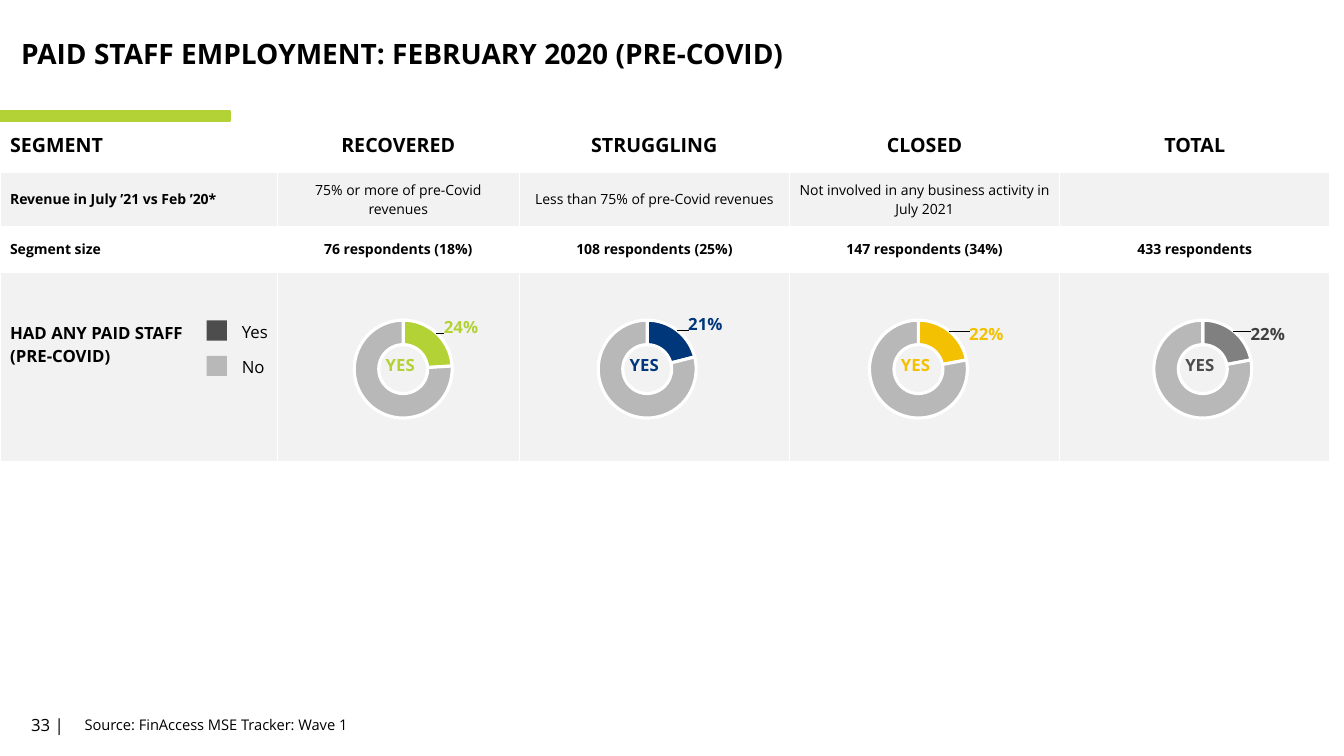
"""Build the paid staff employment slide with a segment table and doughnut charts."""
from dataclasses import dataclass

from lxml import etree
from pptx import Presentation
from pptx.chart.data import CategoryChartData
from pptx.dml.color import RGBColor as Rgb
from pptx.enum.chart import XL_CHART_TYPE as ChartType
from pptx.enum.shapes import MSO_SHAPE as Preset
from pptx.enum.text import MSO_ANCHOR as Anchor, PP_ALIGN as Align
from pptx.oxml import parse_xml
from pptx.oxml.ns import nsdecls, qn
from pptx.util import Inches, Pt


@dataclass(frozen=True)
class Theme:
    font: str = "Open Sans"
    black: str = "000000"
    white: str = "FFFFFF"
    band: str = "F2F2F2"
    lime: str = "B3D235"
    navy: str = "00377B"
    gold: str = "F3C102"
    mid_gray: str = "808080"
    dark_gray: str = "4D4D4D"
    label_gray: str = "404040"
    no_gray: str = "B8B8B8"
    title: float = 20
    heading: float = 14
    body: float = 12
    source: float = 10.5
    small: float = 10


def set_all(target, values):
    for name, value in values.items():
        setattr(target, name, value)


class SlideBuilder:
    def __init__(self, deck, theme):
        self.theme = theme
        self.slide = deck.slides.add_slide(deck.slide_layouts[5])

    def style(self, font, size, color=None, bold=False):
        set_all(font, {"name": self.theme.font, "size": Pt(size), "bold": bold})
        font.color.rgb = Rgb.from_string(color or self.theme.black)

    def paint(self, fill, color):
        fill.solid()
        fill.fore_color.rgb = Rgb.from_string(color)

    def put_text(self, frame, text, size, color=None, bold=False, **paragraph_format):
        for index, line in enumerate(text.split("\n")):
            paragraph = frame.add_paragraph() if index else frame.paragraphs[0]
            set_all(paragraph, paragraph_format)
            run = paragraph.add_run()
            run.text = line
            self.style(run.font, size, color, bold)

    def title(self, text, box):
        heading = self.slide.shapes.title
        set_all(heading, dict(zip(("left", "top", "width", "height"), map(Inches, box))))
        set_all(heading.text_frame, {"vertical_anchor": Anchor.MIDDLE, "word_wrap": True})
        self.put_text(heading.text_frame, text, self.theme.title, bold=True,
                      alignment=Align.LEFT, line_spacing=0.9)

    def text(self, text, box, size, color=None, bold=False, anchor=Anchor.TOP, **paragraph_format):
        frame = self.slide.shapes.add_textbox(*map(Inches, box)).text_frame
        set_all(frame, {"word_wrap": True, "vertical_anchor": anchor})
        self.put_text(frame, text, size, color, bold, **paragraph_format)

    def block(self, box, color, outlined=False):
        shape = self.slide.shapes.add_shape(Preset.RECTANGLE, *map(Inches, box))
        shape.shadow.inherit = False
        self.paint(shape.fill, color)
        if outlined:
            shape.line.color.rgb = Rgb.from_string(color)
            shape.line.width = Pt(1)
        else:
            shape.line.fill.background()

    def border(self, cell, bottom):
        properties = cell._tc.get_or_add_tcPr()
        for index, side in enumerate(("lnL", "lnR", "lnT", "lnB")):
            width = Pt(bottom if side == "lnB" else 1)
            properties.insert(index, parse_xml(
                f'<a:{side} {nsdecls("a")} w="{width}"><a:solidFill>'
                f'<a:srgbClr val="{self.theme.white}"/></a:solidFill></a:{side}>'))

    def table(self, rows, left, top, widths, heights):
        grid = self.slide.shapes.add_table(
            len(heights), len(widths), Inches(left), Inches(top),
            Inches(sum(widths)), Inches(sum(heights))).table
        set_all(grid, {"first_row": False, "horz_banding": False})
        for column, width in zip(grid.columns, widths):
            column.width = Inches(width)
        for r, (row, height) in enumerate(zip(rows, heights)):
            grid.rows[r].height = Inches(height)
            size = (self.theme.heading, self.theme.small, self.theme.small,
                    self.theme.body, self.theme.small)[r]
            for c, text in enumerate(row):
                cell = grid.cell(r, c)
                cell.vertical_anchor = Anchor.MIDDLE if r else Anchor.TOP
                if r % 2:
                    self.paint(cell.fill, self.theme.band)
                else:
                    cell.fill.background()
                self.border(cell, 1 if r else 3)
                if text:
                    self.put_text(cell.text_frame, text, size, bold=c == 0 or r != 1,
                                  alignment=Align.CENTER if c else Align.LEFT)
        return grid

    def doughnut(self, left, share, color, label_color, yes_color, label_shift):
        data = CategoryChartData(number_format="0%")
        data.categories = ["1", "2"]
        data.add_series("Series 1", (share, round(1 - share, 2)))
        chart = self.slide.shapes.add_chart(
            ChartType.DOUGHNUT, *map(Inches, (left, 2.92, 2.95, 1.35)), data).chart
        set_all(chart, {"has_legend": False, "has_title": False})
        self.style(chart.font, self.theme.small)
        plot = chart.plots[0]
        plot.vary_by_categories = False
        ring = plot.series[0]
        for index, fill in enumerate((color, self.theme.no_gray)):
            part = ring.points[index].format
            self.paint(part.fill, fill)
            part.line.color.rgb = Rgb.from_string(self.theme.white)
            part.line.width = Pt(2.25)
        set_all(ring.data_labels, {"show_value": False, "show_percentage": False,
                                   "number_format": "0%", "number_format_is_linked": False})
        self.style(ring.points[0].data_label.font, self.theme.body, label_color, True)
        space = chart._chartSpace
        space.find(".//" + qn("c:holeSize")).set("val", "59")
        label = space.find(".//" + qn("c:dLbl"))
        label.insert(1, self.layout(zip("xy", label_shift)))
        label.insert(2, parse_xml(
            f'<c:numFmt {nsdecls("c")} formatCode="0%" sourceLinked="0"/>'))
        area = space.find(".//" + qn("c:plotArea"))
        for old in area.findall(qn("c:layout")):
            area.remove(old)
        area.insert(0, self.layout((
            ("layoutTarget", "inner"), ("xMode", "edge"), ("yMode", "edge"),
            ("x", 0.34), ("y", 0.19), ("w", 0.33), ("h", 0.72))))
        self.text("YES", (left + 1.17, 3.47, 0.58, 0.3), self.theme.body, yes_color, True,
                  alignment=Align.CENTER, space_after=Pt(6))

    def layout(self, settings):
        layout = parse_xml(f'<c:layout {nsdecls("c")}/>')
        manual = etree.SubElement(layout, qn("c:manualLayout"))
        for name, value in settings:
            etree.SubElement(manual, qn("c:" + name)).set("val", str(value))
        return layout


def main():
    theme = Theme()
    deck = Presentation()
    set_all(deck, {"slide_width": Inches(13.33), "slide_height": Inches(7.5)})
    page = SlideBuilder(deck, theme)
    page.block((0, 1.1, 2.28, 0.1), theme.lime, outlined=True)
    page.title("PAID STAFF EMPLOYMENT: FEBRUARY 2020 (PRE-COVID)", (0.11, 0.04, 11.78, 1.02))
    page.text("33 |", (0.21, 6.99, 0.69, 0.4), theme.body, anchor=Anchor.MIDDLE)
    segments = page.table((
        ("SEGMENT", "RECOVERED", "STRUGGLING", "CLOSED", "TOTAL"),
        ("Revenue in July ’21 vs Feb ’20*", "75% or more of pre-Covid revenues",
         "Less than 75% of pre-Covid revenues",
         "Not involved in any business activity in July 2021", ""),
        ("Segment size", "76 respondents (18%)", "108 respondents (25%)",
         "147 respondents (34%)", "433 respondents"),
        ("HAD ANY PAID STAFF\n(PRE-COVID)", "", "", "", ""),
        ("",) * 5,
    ), 0, 1.25, (2.75, 2.4, 2.68, 2.68, 2.68), (0.45, 0.55, 0.45, 1.88, 2.1))
    segments.cell(3, 0).margin_bottom = Inches(0.49)
    for answer, color, top in (("Yes", theme.dark_gray, 3.18), ("No", theme.no_gray, 3.53)):
        page.block((2.05, top, 0.2, 0.2), color)
        page.text(answer, (2.3, top - 0.04, 0.8, 0.3), theme.body, space_after=Pt(6))
    for left, share, color, label_color, yes_color, label_shift in (
        (2.51, 0.24, theme.lime, theme.lime, theme.lime, (0.11, -0.11)),
        (4.93, 0.21, theme.navy, theme.navy, theme.navy, (0.12, -0.12)),
        (7.62, 0.22, theme.gold, theme.gold, theme.gold, (0.15, -0.05)),
        (10.44, 0.22, theme.mid_gray, theme.label_gray, theme.dark_gray, (0.14, -0.05)),
    ):
        page.doughnut(left, share, color, label_color, yes_color, label_shift)
    page.text("Source: FinAccess MSE Tracker: Wave 1", (0.74, 7.05, 3.1, 0.29),
              theme.source, space_after=Pt(6))
    deck.save("out.pptx")


if __name__ == "__main__":
    main()
